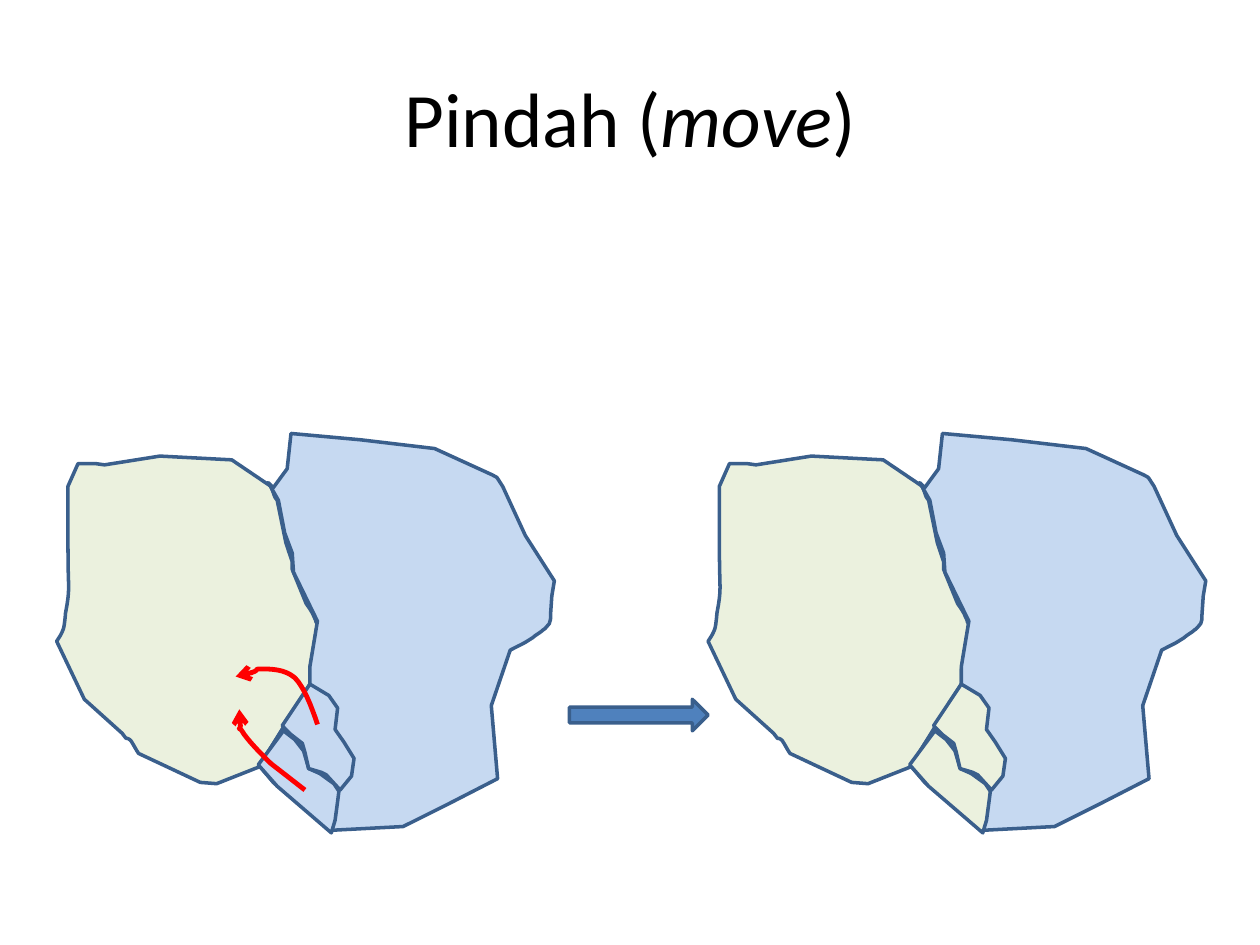
import pptx
import pptx.util
import pptx.dml.color
import pptx.enum.shapes
import pptx.enum.text
import pptx.oxml

THEME = {
    "font": "Calibri", "title_size": 44, "text": "000000",
    "green": "EBF1DE", "blue": "C6D9F1", "outline": "3A5F8C",
    "arrow": "4F81BD", "move": "FF0000",
    "outline_width": 2, "move_width": 2.75,
}

TITLE = [("Pindah (", False), ("move", True), (")", False)]

# Each point is (x, y); a curve is (control, control, end) flattened to six numbers.
LEFT_REGION = [
    (0.83, 3.69), (1.27, 3.62), (1.84, 3.65), (2.15, 3.86),
    (2.19, 3.96, 2.17, 3.93, 2.2, 3.97), (2.27, 4.31),
    (2.27, 4.31, 2.31, 4.43, 2.32, 4.46), (2.32, 4.52), (2.43, 4.79),
    (2.45, 4.82, 2.48, 4.86, 2.49, 4.89), (2.53, 4.97, 2.49, 4.92, 2.52, 4.95),
    (2.46, 5.32), (2.46, 5.45), (2.05, 6.09), (1.72, 6.22), (1.59, 6.21),
    (1.1, 5.98), (1.08, 5.95, 1.06, 5.91, 1.04, 5.88),
    (1.03, 5.87, 1.02, 5.86, 1, 5.86), (0.97, 5.82), (0.67, 5.55), (0.45, 5.09),
    (0.47, 5.06, 0.49, 5.03, 0.5, 5), (0.51, 4.99, 0.52, 4.88, 0.52, 4.87),
    (0.56, 4.65, 0.54, 4.72, 0.54, 4.32), (0.54, 3.86), (0.62, 3.68), (0.76, 3.68),
]
RIGHT_REGION = [
    (2.13, 3.83), (2.21, 3.97), (2.26, 4.23), (2.32, 4.39), (2.33, 4.54),
    (2.52, 4.93), (2.46, 5.29), (2.46, 5.43), (2.06, 6.08), (2.17, 6.21),
    (2.62, 6.59), (3.2, 6.56), (3.56, 6.38), (3.95, 6.18), (3.9, 5.6), (4.05, 5.16),
    (4.18, 5.09, 4.12, 5.13, 4.23, 5.06), (4.25, 5.04, 4.29, 5.02, 4.31, 5),
    (4.33, 4.99, 4.34, 4.97, 4.36, 4.95), (4.37, 4.91, 4.37, 4.93, 4.37, 4.88),
    (4.38, 4.73), (4.4, 4.61), (4.17, 4.25), (3.99, 3.86),
    (3.93, 3.77, 3.96, 3.8, 3.91, 3.77), (3.45, 3.56), (2.86, 3.49),
    (2.31, 3.44), (2.28, 3.72), (2.17, 3.87),
]
LOWER_PARCEL = [
    (2.05, 6.07), (2.25, 5.8), (2.34, 5.87), (2.41, 5.96), (2.45, 6.1), (2.54, 6.14),
    (2.65, 6.22), (2.69, 6.28), (2.68, 6.36), (2.66, 6.51), (2.63, 6.61), (2.2, 6.24),
]
UPPER_PARCEL = [
    (2.24, 5.76), (2.46, 5.43), (2.61, 5.52), (2.68, 5.62), (2.66, 5.79),
    (2.73, 5.89), (2.81, 6.02), (2.79, 6.16), (2.7, 6.27), (2.59, 6.15),
    (2.55, 6.13), (2.45, 6.1), (2.42, 5.97), (2.4, 5.9), (2.31, 5.83),
]
MAPS = [(0, "blue"), (5.17, "green")]
MOVE_ARROWS = [
    [(2.52, 5.75), (2.47, 5.6, 2.41, 5.45, 2.34, 5.38),
     (2.26, 5.31, 2.15, 5.31, 2.07, 5.31), (1.99, 5.31, 2.12, 5.32, 1.87, 5.37)],
    [(2.42, 6.27), (2.33, 6.2, 2.24, 6.13, 2.15, 6.06),
     (2.07, 5.98, 1.96, 5.87, 1.92, 5.8), (1.87, 5.73, 1.93, 5.89, 1.9, 5.63)],
]
CURVE_STEPS = 8


def color(name):
    return pptx.dml.color.RGBColor.from_string(THEME[name])


def add_text(p, text, *, size, fill, italic=False):
    r = p.add_run()
    r.text = text
    r.font.name = THEME["font"]
    r.font.size = pptx.util.Pt(size)
    r.font.italic = italic
    r.font.color.rgb = color(fill)


def flatten(path):
    points = [path[0]]
    for step in path[1:]:
        if len(step) == 2:
            points.append(step)
            continue
        corners = [points[-1], step[:2], step[2:4], step[4:]]
        for i in range(1, CURVE_STEPS + 1):
            t = i / CURVE_STEPS
            weights = ((1 - t) ** 3, 3 * t * (1 - t) ** 2, 3 * t * t * (1 - t), t ** 3)
            points.append(tuple(sum(w * c[axis] for w, c in zip(weights, corners))
                                for axis in (0, 1)))
    return points


def style(sp, fill, line, width):
    sp.shadow.inherit = False
    if fill:
        sp.fill.solid()
        sp.fill.fore_color.rgb = color(fill)
    else:
        sp.fill.background()
    sp.line.color.rgb = color(line)
    sp.line.width = pptx.util.Pt(width)


def add_outline(shapes, path, *, dx=0, fill=None, line="outline", width="outline_width"):
    points = [(pptx.util.Inches(x + dx), pptx.util.Inches(y)) for x, y in flatten(path)]
    builder = shapes.build_freeform(*points[0])
    builder.add_line_segments(points[1:], close=fill is not None)
    sp = builder.convert_to_shape()
    style(sp, fill, line, THEME[width])
    return sp


def add_title(s):
    title = s.shapes.title
    title.left, title.top, title.width, title.height = map(
        pptx.util.Inches, (0.5, 0.3, 9, 1.25))
    tf = title.text_frame
    tf.vertical_anchor = pptx.enum.text.MSO_ANCHOR.MIDDLE
    p = tf.paragraphs[0]
    p.alignment = pptx.enum.text.PP_ALIGN.CENTER
    for text, italic in TITLE:
        add_text(p, text, size=THEME["title_size"], fill="text", italic=italic)


def main():
    prs = pptx.Presentation()
    prs.slide_width, prs.slide_height = pptx.util.Inches(10), pptx.util.Inches(7.5)
    s = prs.slides.add_slide(prs.slide_layouts[5])
    add_title(s)

    for dx, parcel_fill in MAPS:
        group = s.shapes.add_group_shape()
        for path, fill in [(LEFT_REGION, "green"), (RIGHT_REGION, "blue"),
                           (LOWER_PARCEL, parcel_fill), (UPPER_PARCEL, parcel_fill)]:
            add_outline(group.shapes, path, dx=dx, fill=fill)

    sp = s.shapes.add_shape(pptx.enum.shapes.MSO_SHAPE.RIGHT_ARROW,
                            *map(pptx.util.Inches, (4.52, 5.55, 1.1, 0.25)))
    style(sp, "arrow", "outline", THEME["outline_width"])

    for path in MOVE_ARROWS:
        sp = add_outline(s.shapes, path, line="move", width="move_width")
        ln = sp.line._get_or_add_ln()
        ln.append(pptx.oxml.parse_xml(
            '<a:tailEnd xmlns:a="http://schemas.openxmlformats.org/drawingml/2006/main"'
            ' type="arrow"/>'))

    prs.save("out.pptx")


if __name__ == "__main__":
    main()
